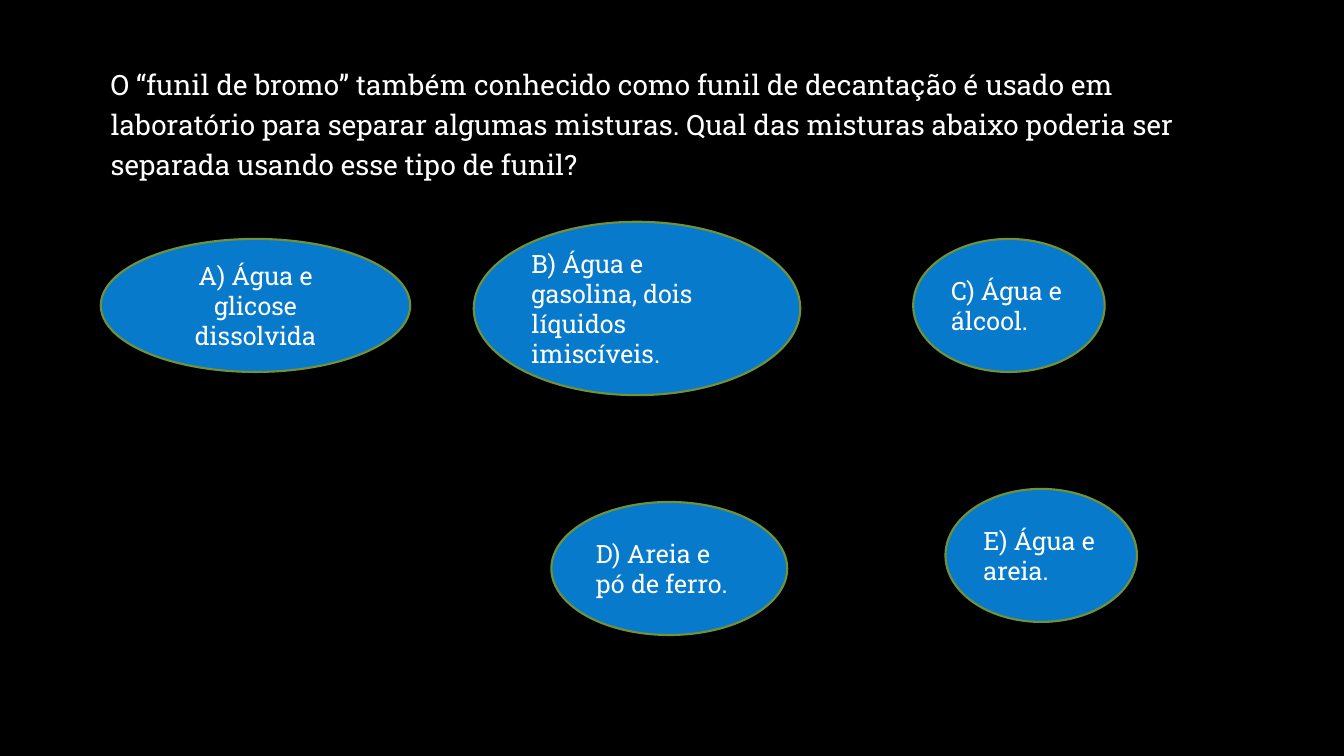
from pptx import Presentation
from pptx.dml.color import RGBColor
from pptx.enum import shapes, text
from pptx.util import Pt

BLACK = RGBColor(0x00, 0x00, 0x00)
WHITE = RGBColor(0xFF, 0xFF, 0xFF)
BLUE = RGBColor(0x07, 0x7A, 0xCC)
OLIVE = RGBColor(0x75, 0x92, 0x32)
FONT = "Roboto Slab"
LEFT, CENTER = text.PP_ALIGN.LEFT, text.PP_ALIGN.CENTER

QUESTION = (
    "O “funil de bromo” também conhecido como funil de decantação é usado em "
    "laboratório para separar algumas misturas. Qual das misturas abaixo poderia ser "
    "separada usando esse tipo de funil?"
)

# Answer text, left, top, width, height, alignment
ANSWERS = [
    ("A) Água e glicose dissolvida", 72, 170.64, 221.04, 95.04, CENTER),
    ("B) Água e gasolina, dois líquidos imiscíveis.", 338.4, 158.4, 233.28, 123.84, LEFT),
    ("C) Água e álcool.", 652.32, 170.64, 136.8, 95.04, LEFT),
    ("D) Areia e pó de ferro.", 393.84, 358.56, 168.48, 95.04, LEFT),
    ("E) Água e areia.", 675.36, 349.2, 136.8, 95.04, LEFT),
]


def set_format(target, values):
    for name, value in values.items():
        setattr(target, name, value)


def write_text(shape, words, size, anchor, para_format):
    set_format(shape.text_frame, {"word_wrap": True, "vertical_anchor": anchor})
    para = shape.text_frame.paragraphs[0]
    set_format(para, para_format)
    span = para.add_run()
    span.text = words
    set_format(span.font, {"name": FONT, "size": Pt(size)})
    span.font.color.rgb = WHITE


def add_question(page):
    box = page.shapes.add_textbox(Pt(72), Pt(39.6), Pt(815), Pt(416))
    write_text(box, QUESTION, 20, text.MSO_ANCHOR.TOP,
               {"line_spacing": 1.2, "space_before": Pt(10)})


def add_answer(page, words, left, top, width, height, alignment):
    oval = page.shapes.add_shape(
        shapes.MSO_SHAPE.OVAL, Pt(left), Pt(top), Pt(width), Pt(height))
    oval.shadow.inherit = False
    oval.fill.solid()
    oval.fill.fore_color.rgb = BLUE
    oval.line.color.rgb = OLIVE
    oval.line.width = Pt(1.5)
    write_text(oval, words, 18, text.MSO_ANCHOR.MIDDLE, {"alignment": alignment})


def main():
    deck = Presentation()
    set_format(deck, {"slide_width": Pt(960), "slide_height": Pt(540)})
    page = deck.slides.add_slide(deck.slide_layouts[6])
    page.background.fill.solid()
    page.background.fill.fore_color.rgb = BLACK

    # Question above, answers below
    add_question(page)
    for answer in ANSWERS:
        add_answer(page, *answer)

    deck.save("out.pptx")


if __name__ == "__main__":
    main()
